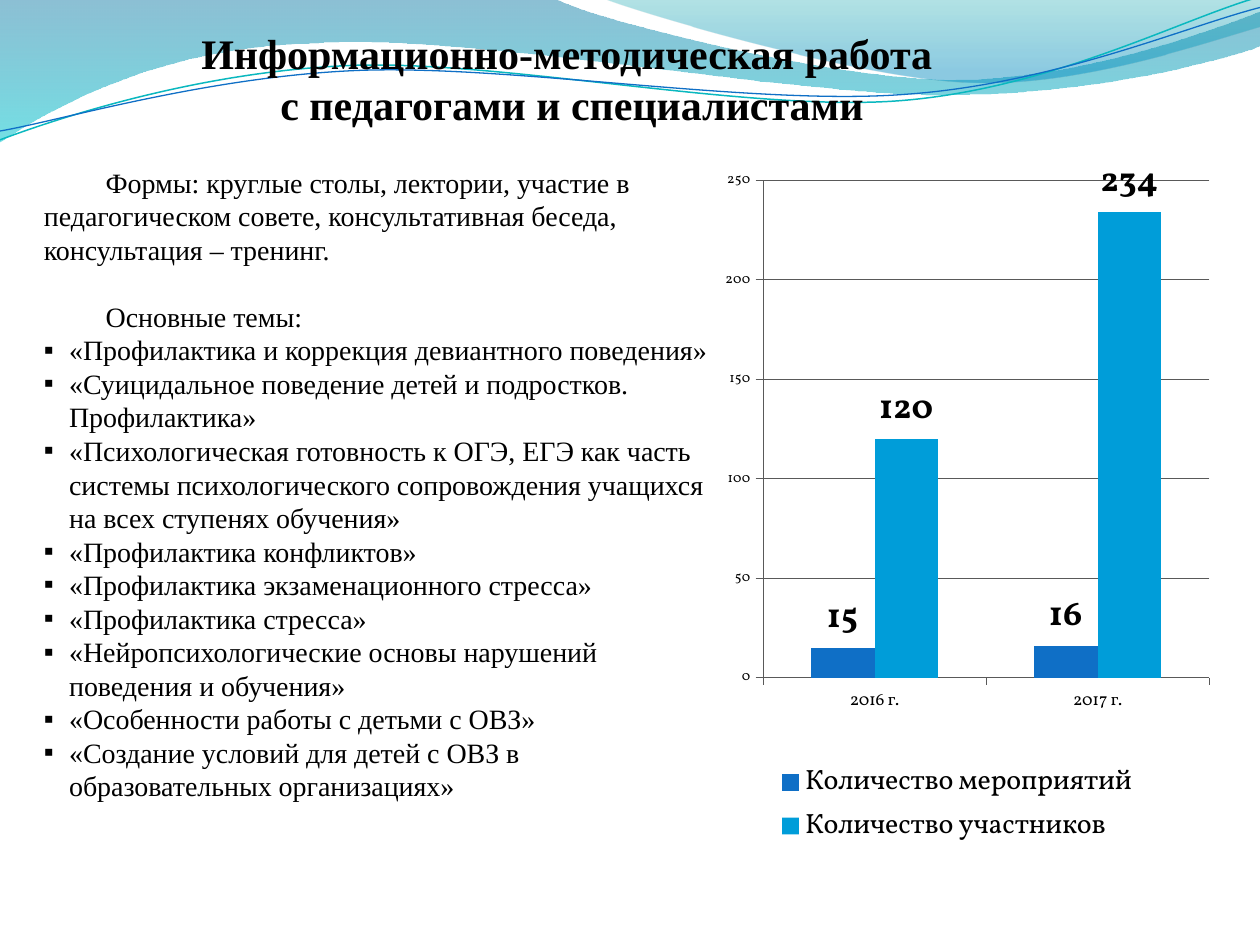
"""Build a slide on methodical work with teachers: topics on the left, a column chart on the right."""
import math
from lxml import etree
from pptx import Presentation, util as u
from pptx.chart import data
from pptx.dml import color
from pptx.enum import chart as charts, text
from pptx.oxml import ns

SERIF, CHART_FONT = "Times New Roman", "Vollkorn"
BLACK, BLUE, SKY = "000000", "0F6FC6", "009DD9"


def rgb(value):
    """Return the colour of a hex string."""
    return color.RGBColor.from_string(value)


def set_values(target, values):
    """Set each attribute of the target from a dict of format values."""
    for name, value in values.items():
        if name == "color":
            target.color.rgb = rgb(value)
        else:
            setattr(target, name, value)


presentation = Presentation()
set_values(presentation, {"slide_width": u.Inches(10), "slide_height": u.Inches(7.5)})
slide = presentation.slides.add_slide(presentation.slide_layouts[6])
width, height = presentation.slide_width, presentation.slide_height

waves = [
    {"start": (0, 0), "gradient": [("0074A1", 0, 45), ("00C6CF", 1, 55)], "segments": [
        [(4.4, -0.01)], [(4.76, 0.17), (6.64, 0.63), (7.58, 0.63)],
        [(8.53, 0.63), (9.58, 0.26), (10, 0.09)], [(10.01, 0.36)],
        [(9.83, 0.44), (8.7, 0.76), (7.46, 0.75)], [(6.22, 0.75), (3.82, 0.28), (2.57, 0.34)],
        [(1.29, 0.36), (0.46, 0.83), (-0.01, 1.13)]]},
    {"start": (4.79, -0.01), "gradient": [("00A1A9", 0, 30), ("008BBF", 0.8, 45)], "segments": [
        [(5.09, 0.11), (6.82, 0.62), (7.69, 0.65)], [(8.56, 0.69), (9.61, 0.32), (10, 0.21)],
        [(10, 0)]]},
    {"start": (0, 1.11), "line": ("0AB8BF", 0.85), "centre": (4.99, 0.58), "segments": [
        [(0.48, 0.93), (1.58, 0.57), (2.77, 0.52)], [(3.95, 0.47), (5.93, 0.89), (7.13, 0.8)],
        [(8.33, 0.71), (9.38, 0.15), (9.98, -0.02)]]},
    {"start": (0, 1.04), "line": (BLUE, 0.75), "centre": (5, 0.59), "segments": [
        [(0.47, 0.96), (1.64, 0.61), (2.83, 0.56)], [(4.03, 0.51), (5.97, 0.84), (7.17, 0.75)],
        [(8.36, 0.67), (9.41, 0.21), (10, 0.06)]]},
]
tilt = 2.7
sine, cosine = math.sin(math.radians(tilt)), math.cos(math.radians(tilt))
for wave in waves:
    points = [wave["start"], *(point for segment in wave["segments"] for point in segment)]
    if "centre" in wave:
        middle_x, middle_y = wave["centre"]
        points = [(middle_x + (x - middle_x) * cosine - (y - middle_y) * sine,
                   middle_y + (x - middle_x) * sine + (y - middle_y) * cosine) for x, y in points]
    points = [(u.Inches(x), u.Inches(y)) for x, y in points]
    builder = slide.shapes.build_freeform(*points[0])
    builder.add_line_segments(points[1:], close="gradient" in wave)
    shape = builder.convert_to_shape()
    shape.shadow.inherit = False
    corners = iter(list(shape._element.iter(ns.qn("a:lnTo"))))
    for segment in wave["segments"]:
        group = [next(corners) for _ in segment]
        if len(group) == 3:
            curve = etree.Element(ns.qn("a:cubicBezTo"))
            group[0].addprevious(curve)
            for corner in group:
                curve.append(corner[0])
                corner.getparent().remove(corner)
    if "line" in wave:
        shape.fill.background()
        shape.rotation = 360 - tilt
        line_color, line_width = wave["line"]
        set_values(shape.line, {"color": line_color, "width": u.Pt(line_width)})
        continue
    shape.line.fill.background()
    shape.fill.gradient()
    shape.fill.gradient_angle = 270
    for stop, (stop_color, position, _) in zip(shape.fill.gradient_stops, wave["gradient"]):
        set_values(stop, {"color": stop_color, "position": position})
    stop_colors = shape._element.spPr.find(ns.qn("a:gradFill")).iter(ns.qn("a:srgbClr"))
    for element, (_, _, opacity) in zip(stop_colors, wave["gradient"]):
        etree.SubElement(element, ns.qn("a:alpha"), val=str(opacity * 1000))

forms = ("Формы: круглые столы, лектории, участие в педагогическом совете, "
         "консультативная беседа, консультация – тренинг.")
topics = [
    "«Профилактика и коррекция девиантного поведения»",
    "«Суицидальное поведение детей и подростков. Профилактика»",
    "«Психологическая готовность к ОГЭ, ЕГЭ как часть системы психологического "
    "сопровождения учащихся на всех ступенях обучения»",
    "«Профилактика конфликтов»",
    "«Профилактика экзаменационного стресса»",
    "«Профилактика стресса»",
    "«Нейропсихологические основы нарушений поведения и обучения»",
    "«Особенности работы с детьми с ОВЗ»",
    "«Создание условий для детей с ОВЗ в образовательных организациях»",
]
lead, bullet, centred = (0, 0.49, ""), (0.2, -0.2, "▪"), (0, 0, "")
text_boxes = [
    {"place": (0.025, 0.164, 0.558, 0.696), "align": text.PP_ALIGN.LEFT,
     "font": {"size": u.Pt(16)}, "line": 19.17, "gap_before": 1,
     "lines": [(forms, lead), ("Основные темы:", lead)] + [(topic, bullet) for topic in topics]},
    {"place": (0.025, 0.022, 0.858, 0.121), "align": text.PP_ALIGN.CENTER,
     "font": {"size": u.Pt(24), "bold": True}, "line": 29.1, "gap_before": None,
     "lines": [("Информационно-методическая работа ", centred),
               ("с педагогами и специалистами", centred)]},
]
for box in text_boxes:
    left, top, across, down = box["place"]
    shape = slide.shapes.add_textbox(
        int(left * width), int(top * height), int(across * width), int(down * height))
    frame = shape.text_frame
    set_values(frame, {"word_wrap": True, "vertical_anchor": text.MSO_ANCHOR.MIDDLE})
    for index, (words, (margin, indent, mark)) in enumerate(box["lines"]):
        paragraph = frame.paragraphs[0] if index == 0 else frame.add_paragraph()
        paragraph.text = words
        set_values(paragraph, {"alignment": box["align"], "line_spacing": u.Pt(box["line"])})
        if index == box["gap_before"]:
            paragraph.space_before = u.Pt(box["line"])
        properties = paragraph._p.get_or_add_pPr()
        properties.set("marL", str(u.Inches(margin)))
        properties.set("indent", str(u.Inches(indent)))
        if mark:
            etree.SubElement(properties, ns.qn("a:buFont"), typeface="Arial")
            etree.SubElement(properties, ns.qn("a:buChar"), char=mark)
        set_values(paragraph.runs[0].font, {"name": SERIF, "color": BLACK, **box["font"]})

chart_data = data.CategoryChartData()
chart_data.categories = ["2016 г.", "2017 г."]
chart_data.add_series("Количество мероприятий", (15, 16))
chart_data.add_series("Количество участников", (120, 234))
chart = slide.shapes.add_chart(
    charts.XL_CHART_TYPE.COLUMN_CLUSTERED, int(0.558 * width), int(0.167 * height),
    int(0.403 * width), int(0.733 * height), chart_data).chart
set_values(chart, {"has_title": False, "has_legend": True})
set_values(chart.legend, {"position": charts.XL_LEGEND_POSITION.BOTTOM, "include_in_layout": False})
axis_format = {"major_tick_mark": charts.XL_TICK_MARK.OUTSIDE,
               "minor_tick_mark": charts.XL_TICK_MARK.NONE}
set_values(chart.category_axis, axis_format)
set_values(chart.value_axis, {**axis_format, "minimum_scale": 0, "maximum_scale": 250,
                              "major_unit": 50, "has_major_gridlines": True})
for line in (chart.category_axis.format.line, chart.value_axis.format.line,
             chart.value_axis.major_gridlines.format.line):
    set_values(line, {"color": "595959", "width": u.Pt(0.5)})

plot = chart.plots[0]
set_values(plot, {"gap_width": 150, "overlap": 0, "vary_by_categories": False})
fonts = [(chart.font, 10, False), (chart.category_axis.tick_labels.font, 10, False),
         (chart.value_axis.tick_labels.font, 8, False), (chart.legend.font, 16, False)]
for series, fill_color in zip(plot.series, (BLUE, SKY)):
    series.format.fill.solid()
    series.format.fill.fore_color.rgb = rgb(fill_color)
    labels = series.data_labels
    set_values(labels, {"show_value": True, "position": charts.XL_LABEL_POSITION.OUTSIDE_END})
    fonts.append((labels.font, 20, True))
for font, size, bold in fonts:
    set_values(font, {"name": CHART_FONT, "size": u.Pt(size), "bold": bold, "color": BLACK})

plot_area = chart._chartSpace.chart.plotArea
for old in plot_area.findall(ns.qn("c:layout")):
    plot_area.remove(old)
layout = etree.Element(ns.qn("c:layout"))
plot_area.insert(0, layout)
manual = etree.SubElement(layout, ns.qn("c:manualLayout"))
for tag, value in (("layoutTarget", "inner"), ("xMode", "edge"), ("yMode", "edge"),
                   ("x", 0.118), ("y", 0.027), ("w", 0.879), ("h", 0.722)):
    etree.SubElement(manual, ns.qn("c:" + tag), val=str(value))

presentation.save("out.pptx")
